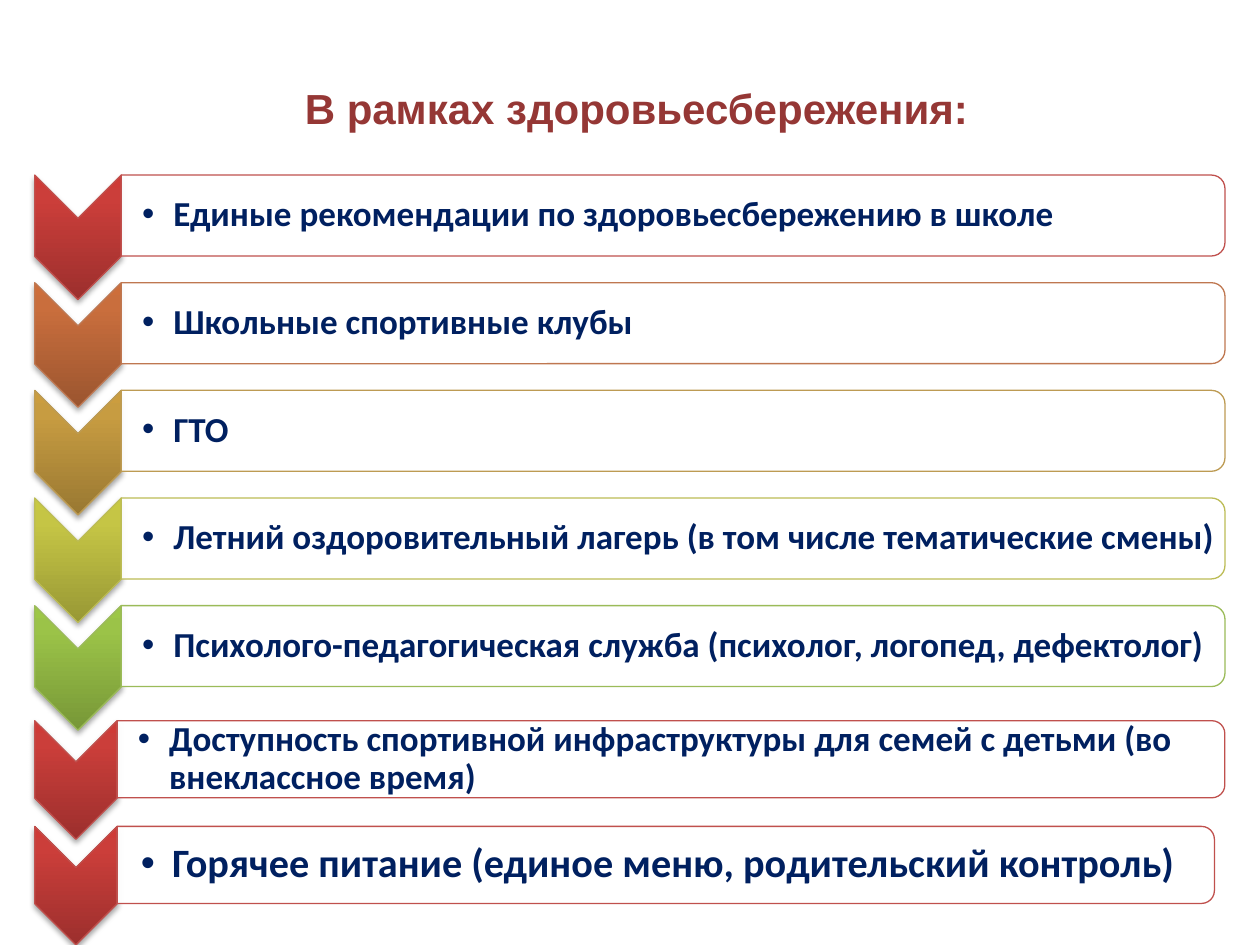
import pptx
import pptx.util
import pptx.dml.color
import pptx.enum.shapes
import pptx.enum.text
import pptx.oxml
import pptx.oxml.ns
from pptx.util import Cm

RGBColor = pptx.dml.color.RGBColor
SHAPE = pptx.enum.shapes.MSO_SHAPE
ANCHOR = pptx.enum.text.MSO_ANCHOR
NAMESPACE = pptx.oxml.ns.nsdecls("a")

WHITE = RGBColor(0xFF, 0xFF, 0xFF)
NAVY = RGBColor(0x00, 0x20, 0x60)
MAROON = RGBColor(0x95, 0x37, 0x35)

RED_LINE = RGBColor(0xC0, 0x50, 0x4D)
ORANGE_LINE = RGBColor(0xBF, 0x77, 0x50)
GOLD_LINE = RGBColor(0xBD, 0x9B, 0x53)
OLIVE_LINE = RGBColor(0xBC, 0xBC, 0x56)
GREEN_LINE = RGBColor(0x9B, 0xBB, 0x59)

RED = (RED_LINE, RGBColor(0x9C, 0x2F, 0x2D), RGBColor(0xCB, 0x3E, 0x3A), RGBColor(0xCE, 0x3B, 0x37))
ORANGE = (ORANGE_LINE, RGBColor(0x9B, 0x55, 0x2F), RGBColor(0xC9, 0x6E, 0x3D), RGBColor(0xCD, 0x6E, 0x3B))
GOLD = (GOLD_LINE, RGBColor(0x99, 0x78, 0x32), RGBColor(0xC7, 0x9C, 0x41), RGBColor(0xCB, 0x9D, 0x3F))
OLIVE = (OLIVE_LINE, RGBColor(0x98, 0x98, 0x35), RGBColor(0xC5, 0xC5, 0x45), RGBColor(0xC8, 0xC9, 0x42))
GREEN = (GREEN_LINE, RGBColor(0x77, 0x97, 0x37), RGBColor(0x9B, 0xC3, 0x48), RGBColor(0x9D, 0xC7, 0x46))

CHEVRON_LEFT = 0.7
FIRST_TOP = 3.53
ROW_PITCH = 2.17

MAIN_ROWS = [
    ("Единые рекомендации по здоровьесбережению в школе", RED),
    ("Школьные спортивные клубы", ORANGE),
    ("ГТО", GOLD),
    ("Летний оздоровительный лагерь (в том числе тематические смены)", OLIVE),
    ("Психолого-педагогическая служба (психолог, логопед, дефектолог)", GREEN),
]


def add_run(paragraph, text, font_name, size, color):
    """Add a bold run to a paragraph."""
    run = paragraph.add_run()
    run.text = text
    run.font.name = font_name
    run.font.size = pptx.util.Pt(size)
    run.font.bold = True
    run.font.color.rgb = color


def add_turned_shape(slide, kind, left, top, width, height, line_color):
    """Add a shape turned a quarter clockwise that covers the given area."""
    shape = slide.shapes.add_shape(
        kind,
        Cm(left + (width - height) / 2), Cm(top + (height - width) / 2),
        Cm(height), Cm(width),
    )
    shape.rotation = 90
    shape.shadow.inherit = False
    shape.line.color.rgb = line_color
    shape.line.width = pptx.util.Pt(0.75)
    return shape


def add_chevron(slide, top, width, height, palette):
    """Add a downward chevron with a vertical gradient and a soft shadow."""
    line_color, *stops = palette
    shape = add_turned_shape(slide, SHAPE.CHEVRON, CHEVRON_LEFT, top, width, height, line_color)
    shape.fill.gradient()
    properties = shape.element.spPr
    stop_list = "".join(
        f'<a:gs pos="{position}"><a:srgbClr val="{color}"/></a:gs>'
        for position, color in zip((0, 80000, 100000), stops)
    )
    gradient = pptx.oxml.parse_xml(
        f'<a:gradFill {NAMESPACE} rotWithShape="0"><a:gsLst>{stop_list}</a:gsLst>'
        '<a:lin ang="16200000" scaled="0"/></a:gradFill>'
    )
    properties.replace(properties.find(pptx.oxml.ns.qn("a:gradFill")), gradient)
    properties.find(pptx.oxml.ns.qn("a:effectLst")).append(pptx.oxml.parse_xml(
        f'<a:outerShdw {NAMESPACE} blurRad="40000" dist="23000" dir="5400000" rotWithShape="0">'
        '<a:srgbClr val="000000"><a:alpha val="35000"/></a:srgbClr></a:outerShdw>'
    ))


def add_bar(slide, left, top, width, height, line_color):
    """Add a translucent white bar with its right corners rounded."""
    shape = add_turned_shape(
        slide, SHAPE.ROUND_2_SAME_RECTANGLE, left, top, width, height, line_color)
    shape.fill.solid()
    shape.fill.fore_color.rgb = WHITE
    color = shape.element.spPr.find(pptx.oxml.ns.qn("a:solidFill"))[0]
    color.append(pptx.oxml.parse_xml(f'<a:alpha {NAMESPACE} val="90000"/>'))


def add_bullet_text(slide, left, top, width, height, text, size):
    """Add a one-item bulleted text box, centred vertically."""
    frame = slide.shapes.add_textbox(Cm(left), Cm(top), Cm(width), Cm(height)).text_frame
    frame.word_wrap = True
    frame.vertical_anchor = ANCHOR.MIDDLE
    frame.margin_left = Cm(0.02 * size)
    frame.margin_right = frame.margin_top = frame.margin_bottom = Cm(0.03)
    paragraph = frame.paragraphs[0]
    paragraph.level = 1
    paragraph.line_spacing = 0.9
    properties = paragraph._p.get_or_add_pPr()
    properties.set("marL", str(Cm(0.63)))
    properties.set("indent", str(Cm(-0.63)))
    properties.append(pptx.oxml.parse_xml(f'<a:buFont {NAMESPACE} typeface="Arial"/>'))
    properties.append(pptx.oxml.parse_xml(f'<a:buChar {NAMESPACE} char="•"/>'))
    add_run(paragraph, text, "Calibri", size, NAVY)


def add_row(slide, top, text, palette, length=2.51, bar_width=22.25, size=20):
    """Add a chevron, the bar that starts at its right edge and the bar text."""
    chevron_width = 0.695 * length
    bar_left = CHEVRON_LEFT + chevron_width
    bar_height = 0.65 * length
    add_chevron(slide, top, chevron_width, length, palette)
    add_bar(slide, bar_left, top, bar_width, bar_height, palette[0])
    add_bullet_text(slide, bar_left + 0.02, top + 0.08, bar_width - 0.08,
                    bar_height - 0.16, text, size)


def add_title(slide, text):
    """Place and format the slide title."""
    title = slide.shapes.title
    title.left, title.top, title.width, title.height = Cm(5.89), Cm(1.38), Cm(14.02), Cm(1.35)
    frame = title.text_frame
    frame.word_wrap = False
    frame.auto_size = pptx.enum.text.MSO_AUTO_SIZE.NONE
    frame.vertical_anchor = ANCHOR.TOP
    paragraph = frame.paragraphs[0]
    paragraph.alignment = pptx.enum.text.PP_ALIGN.JUSTIFY
    paragraph.line_spacing = 1.15
    add_run(paragraph, text, "Arial", 24, MAROON)


def main():
    """Build the slide and save it."""
    presentation = pptx.Presentation()
    presentation.slide_width = Cm(25.4)
    presentation.slide_height = Cm(19.05)
    slide = presentation.slides.add_slide(presentation.slide_layouts[5])
    add_title(slide, "В рамках здоровьесбережения:")
    for index, (text, palette) in enumerate(MAIN_ROWS):
        add_row(slide, FIRST_TOP + index * ROW_PITCH, text, palette)
    add_row(slide, 14.53,
            "Доступность спортивной инфраструктуры для семей с детьми (во внеклассное время)",
            RED, length=2.39, bar_width=22.33)
    add_row(slide, 16.66, "Горячее питание (единое меню, родительский контроль)",
            RED, length=2.39, bar_width=22.12, size=23)
    presentation.save("out.pptx")


if __name__ == "__main__":
    main()
